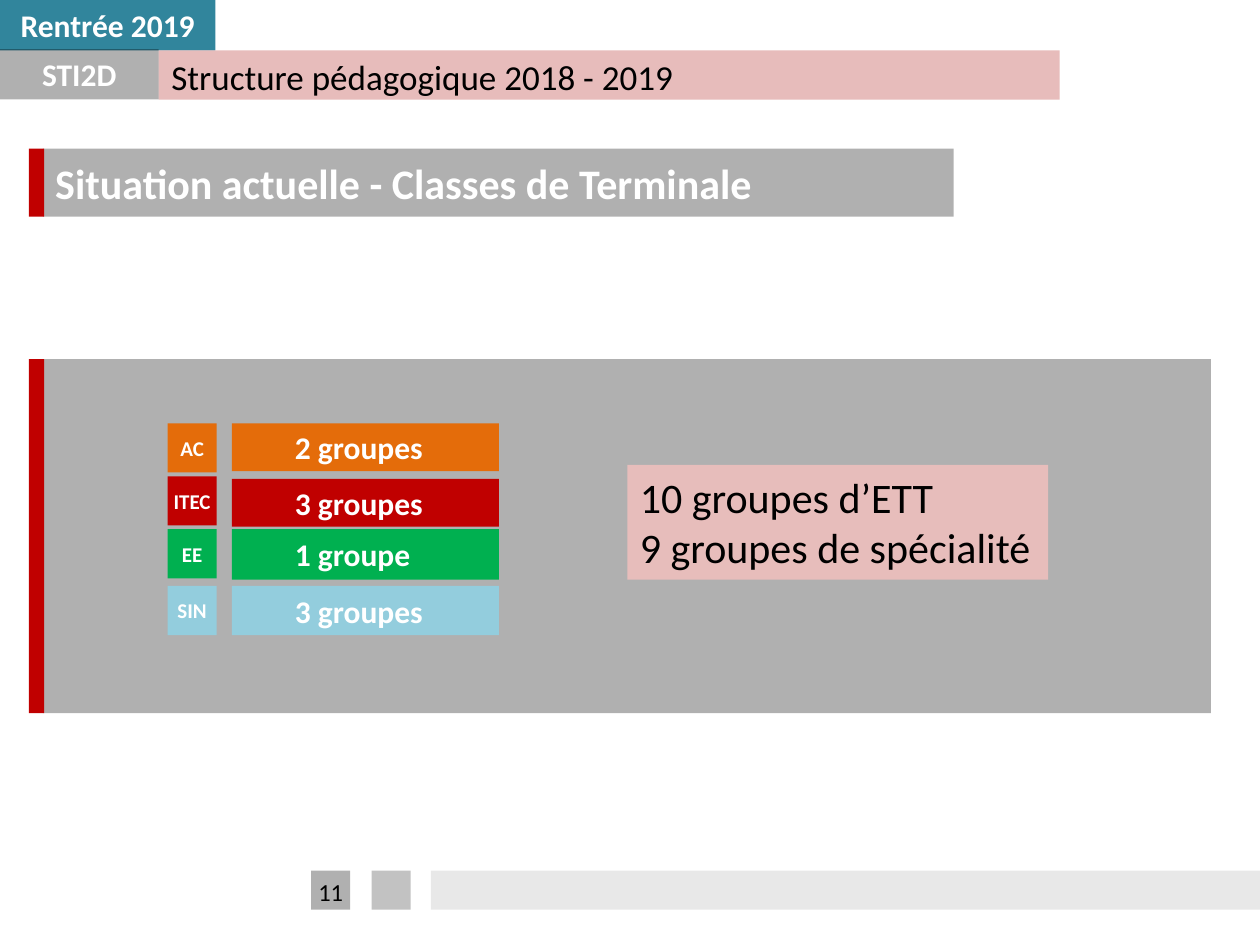
from lxml import etree
from pptx import Presentation
from pptx.dml.color import RGBColor
from pptx.enum.shapes import MSO_SHAPE
from pptx.enum.text import MSO_ANCHOR, PP_ALIGN
from pptx.oxml.ns import qn
from pptx.util import Pt

PX = 9144  # 100 px to the inch
RECT = MSO_SHAPE.RECTANGLE
MID, TOP = MSO_ANCHOR.MIDDLE, MSO_ANCHOR.TOP
LEFT, MIDDLE = PP_ALIGN.LEFT, PP_ALIGN.CENTER

BLACK = RGBColor(0x00, 0x00, 0x00)
WHITE = RGBColor(0xFF, 0xFF, 0xFF)
TEAL = RGBColor(0x31, 0x85, 0x9C)
ROSE = RGBColor(0xD9, 0x96, 0x94)
PINK = RGBColor(0xE7, 0xBD, 0xBB)
RED = RGBColor(0xC0, 0x00, 0x00)
ORANGE = RGBColor(0xE4, 0x6C, 0x0A)
GREEN = RGBColor(0x00, 0xB0, 0x50)
SKY = RGBColor(0x93, 0xCD, 0xDD)


def write(shape, text, size, color=WHITE, bold=True, align=MIDDLE,
          anchor=MID, inset=10, pad=5):
    """Fill a shape with text; inset is the side margin, pad the upper one."""
    frame = shape.text_frame
    form = {"text": text, "word_wrap": True, "vertical_anchor": anchor,
            "margin_left": inset * PX, "margin_right": min(inset, 10) * PX,
            "margin_top": pad * PX, "margin_bottom": pad * PX}
    for name, value in form.items():
        setattr(frame, name, value)
    for para in frame.paragraphs:
        para.alignment = align
        font = {"name": "Calibri", "size": Pt(size), "bold": bold}
        for name, value in font.items():
            setattr(para.font, name, value)
        para.font.color.rgb = color


def block(x, y, w, h, color, alpha=100):
    """Add a plain rectangle; alpha is its opacity in percent."""
    shape = slide.shapes.add_shape(RECT, x * PX, y * PX, w * PX, h * PX)
    shape.shadow.inherit = False
    shape.fill.solid()
    shape.fill.fore_color.rgb = color
    shape.line.fill.background()
    if alpha < 100:
        tint = shape.fill._xPr.find(".//" + qn("a:srgbClr"))
        etree.SubElement(tint, qn("a:alpha"), val=str(alpha * 1000))
    return shape


deck = Presentation()
deck.slide_width, deck.slide_height = 1000 * PX, 750 * PX
slide = deck.slides.add_slide(deck.slide_layouts[5])

# Header
write(block(0, 0, 171, 40, TEAL), "Rentrée 2019", 18)
block(126, 40, 715, 39, ROSE, 63)
write(block(0, 39, 126, 40, BLACK, 31), "STI2D", 18)

title = slide.shapes.title
place = {"left": 126, "top": 39, "width": 715, "height": 44}
for name, value in place.items():
    setattr(title, name, value * PX)
write(title, "Structure pédagogique 2018 - 2019", 20, BLACK, False, LEFT)
slide.shapes._spTree.append(title._element)  # in front of its band

# Footer
for x, w, alpha in [(247, 31, 31), (295, 31, 24), (342, 658, 9)]:
    block(x, 691, w, 31, BLACK, alpha)
number = slide.shapes.add_textbox(234 * PX, 691 * PX, 57 * PX, 40 * PX)
write(number, "11", 14, BLACK, False, anchor=TOP)

# Heading and panel, each with a red edge
head = block(34, 118, 723, 54, BLACK, 31)
write(head, "Situation actuelle - Classes de Terminale", 24, align=LEFT)
block(34, 285, 927, 281, BLACK, 31)
for y, h in [(118, 54), (285, 281)]:
    block(23, y, 12, h, RED)

# Groups by speciality: label, count, colour, tops of chip and bar, bar height
rows = [
    ("AC", "2 groupes", ORANGE, 336, 336, 38),
    ("ITEC", "3 groupes", RED, 378, 380, 38),
    ("EE", "1 groupe", GREEN, 420, 420, 40),
    ("SIN", "3 groupes", SKY, 465, 465, 39),
]
for label, count, color, y, top, h in rows:
    write(block(133, y, 39, 39, color), label, 12, inset=0, pad=0)
    bar = block(184, top, 212, h, color)
    write(bar, count, 18, align=LEFT, inset=50, pad=0)

# Totals
total = block(498, 369, 334, 91, PINK)
write(total, "10 groupes d’ETT\n9 groupes de spécialité", 24, BLACK, False,
      LEFT, TOP)

deck.save("out.pptx")
